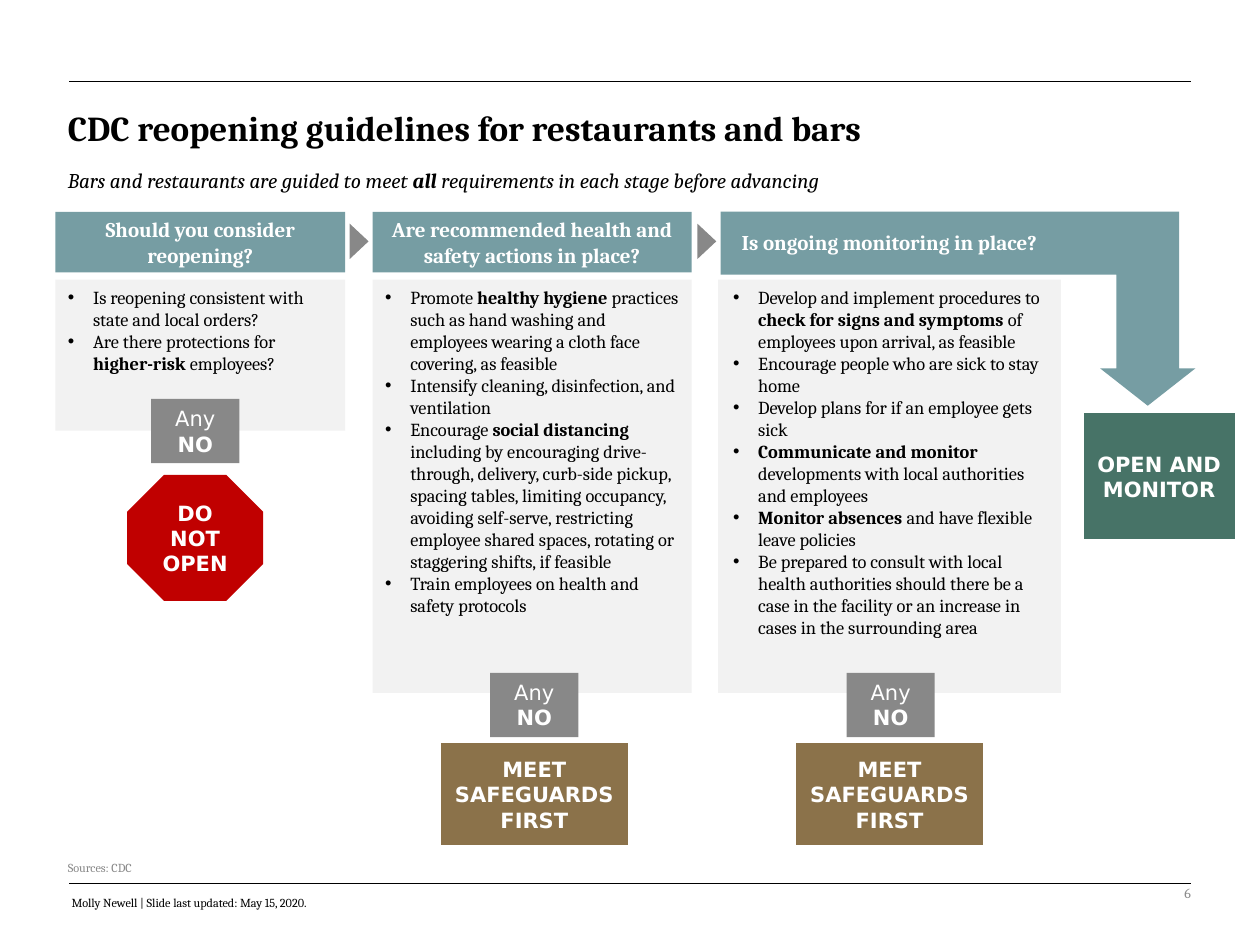
from pptx import Presentation
from pptx.enum.shapes import MSO_CONNECTOR, MSO_SHAPE
from pptx.enum.text import MSO_ANCHOR, PP_ALIGN
from pptx.dml.color import RGBColor
from pptx.oxml.ns import qn
from pptx.util import Pt
from lxml import etree

LINE = MSO_CONNECTOR.STRAIGHT
RECT = MSO_SHAPE.RECTANGLE
FLOW = MSO_SHAPE.FLOWCHART_PROCESS
OCTAGON = MSO_SHAPE.OCTAGON
BENT = MSO_SHAPE.BENT_UP_ARROW
WEDGE = MSO_SHAPE.ISOSCELES_TRIANGLE
TOP, MIDDLE = MSO_ANCHOR.TOP, MSO_ANCHOR.MIDDLE
LEFT, CENTER, RIGHT = PP_ALIGN.LEFT, PP_ALIGN.CENTER, PP_ALIGN.RIGHT

SERIF, SANS = "Cambria", "DejaVu Sans"
COLORS = {
    "black": "000000", "white": "FFFFFF", "teal": "769DA3", "panel": "F2F2F2",
    "gray": "888888", "number": "8C8C8C", "red": "C00000", "brown": "8B724A",
    "green": "477367",
}

TITLE = "*CDC reopening guidelines for restaurants and bars*"
LEAD = "Bars and restaurants are guided to meet *all *requirements in each stage before advancing"
SOURCE = "Sources: CDC"
CREDIT = "Molly Newell | Slide last updated: May 15, 2020."
SAFE = "*MEET SAFEGUARDS FIRST*"

STAGES = [
    {"head": "*Should you consider reopening?*", "left": 31.7, "width": 165.6,
     "text": (31.7, 158.4), "deep": 86.4, "no": 86.4, "bar": True,
     "end": (OCTAGON, "red", "*DO NOT OPEN*", 72.6, 271.4, 77.8, 72),
     "items": [
         "Is reopening consistent with state and local orders?",
         "Are there protections for *higher-risk* employees?",
     ]},
    {"head": "*Are recommended health and safety actions in place?*",
     "left": 213, "width": 182.2, "text": (213, 182.2), "deep": 236.2,
     "no": 280.1, "bar": True,
     "end": (FLOW, "brown", SAFE, 252, 424.8, 106.6, 58.3),
     "items": [
         "Promote *healthy hygiene *practices such as hand washing and employees "
         "wearing a cloth face covering, as feasible",
         "Intensify cleaning, disinfection, and ventilation",
         "Encourage *social distancing *including by encouraging drive-through, "
         "delivery, curb-side pickup, spacing tables, limiting occupancy, avoiding "
         "self-serve, restricting employee shared spaces, rotating or staggering "
         "shifts, if feasible",
         "Train employees on health and safety protocols",
     ]},
    {"head": "*Is ongoing monitoring in place?*", "left": 410.4, "width": 195.8,
     "text": (411.8, 195.1), "deep": 236.2, "no": 483.8, "bar": False,
     "end": (FLOW, "brown", SAFE, 455, 424.8, 106.6, 58.3),
     "items": [
         "Develop and implement procedures to *check for signs and symptoms *of "
         "employees upon arrival, as feasible",
         "Encourage people who are sick to stay home",
         "Develop plans for if an employee gets sick",
         "*Communicate and monitor *developments with local authorities and employees",
         "*Monitor absences *and have flexible leave policies",
         "Be prepared to consult with local health authorities should there be a case "
         "in the facility or an increase in cases in the surrounding area",
     ]},
]

HEAD_Y, HEAD_H, BODY_Y = 121, 34.6, 159.8
NO_W, NO_H, LAP = 50.4, 36.7, 18.2
INDENT = 14.4

deck = Presentation()
deck.slide_width, deck.slide_height = Pt(720), Pt(540)
slide = deck.slides.add_slide(deck.slide_layouts[6])
shapes = slide.shapes


def tint(name):
    return RGBColor.from_string(COLORS[name])


def write(shape, items, size, color, font=SERIF, align=LEFT, anchor=TOP,
          bullet=False, italic=False):
    frame = shape.text_frame
    frame.word_wrap = True
    frame.vertical_anchor = anchor
    for i, item in enumerate(items):
        para = frame.add_paragraph() if i else frame.paragraphs[0]
        para.alignment = align
        if bullet:
            props = para._p.get_or_add_pPr()
            props.set("marL", str(Pt(INDENT)))
            props.set("indent", str(-Pt(INDENT)))
            etree.SubElement(props, qn("a:buFont")).set("typeface", "Arial")
            etree.SubElement(props, qn("a:buChar")).set("char", "•")
        for j, part in enumerate(item.split("*")):
            if part:
                run = para.add_run()
                run.text = part
                run.font.name, run.font.size = font, Pt(size)
                run.font.bold, run.font.italic = j % 2 == 1, italic
                run.font.color.rgb = tint(color)


def label(box, items, size, color="black", **style):
    shape = shapes.add_textbox(*map(Pt, box))
    write(shape, items, size, color, **style)
    return shape


def block(kind, box, fill, text=None, font=SANS):
    shape = shapes.add_shape(kind, *map(Pt, box))
    shape.shadow.inherit = False
    shape.fill.solid()
    shape.fill.fore_color.rgb = tint(fill)
    shape.line.fill.background()
    if text:
        write(shape, [text], 12, "white", font, CENTER, MIDDLE)
    return shape


for y in (46.4, 504.8):
    rule = shapes.add_connector(LINE, Pt(39.6), Pt(y), Pt(680.4), Pt(y))
    rule.line.color.rgb = tint("black")
    rule.line.width = Pt(0.5)
    etree.SubElement(rule._element.spPr, qn("a:effectLst"))

title = label((31.7, 59.8, 662.4, 50.4), [TITLE], 20)
title.text_frame.paragraphs[0].line_spacing = 0.9
label((508.3, 496.1, 179.3, 28.8), ["6"], 8, "number", align=RIGHT, anchor=MIDDLE)
label((31.7, 92.2, 607, 21.6), [LEAD], 12, italic=True)

arrow = block(BENT, (411.8, HEAD_Y, 271.4, 110.9), "teal")
arrow._element.spPr.xfrm.set("flipV", "1")
for i, value in enumerate((0.324, 0.246, 0.193)):
    arrow.adjustments[i] = value

for stage in STAGES:
    head = (stage["left"], HEAD_Y, stage["width"], HEAD_H)
    if stage["bar"]:
        block(RECT, head, "teal", stage["head"], SERIF)
    else:
        label(head, [stage["head"]], 12, "white", align=CENTER, anchor=MIDDLE)
    deep = stage["deep"]
    block(RECT, (stage["left"], BODY_Y, stage["width"], deep), "panel")
    x, wide = stage["text"]
    label((x, BODY_Y, wide, deep - LAP), stage["items"], 10.5, bullet=True)
    lap = BODY_Y + deep - (LAP if stage["bar"] and deep < 100 else 11.5)
    block(RECT, (stage["no"], lap, NO_W, NO_H), "gray", "Any *NO*")
    kind, fill, text, *box = stage["end"]
    block(kind, box, fill, text)

block(FLOW, (619.2, 236.2, 86.4, 72), "green", "*OPEN AND MONITOR*")
for x in (195.1, 393.8):
    block(WEDGE, (x, 132.5, 20.2, 10.8), "gray").rotation = 90

label((31.7, 488.2, 230.4, 15.8), [SOURCE], 7, "gray")
label((33.8, 508.3, 205.2, 15.8), [CREDIT], 7)

deck.save("out.pptx")
